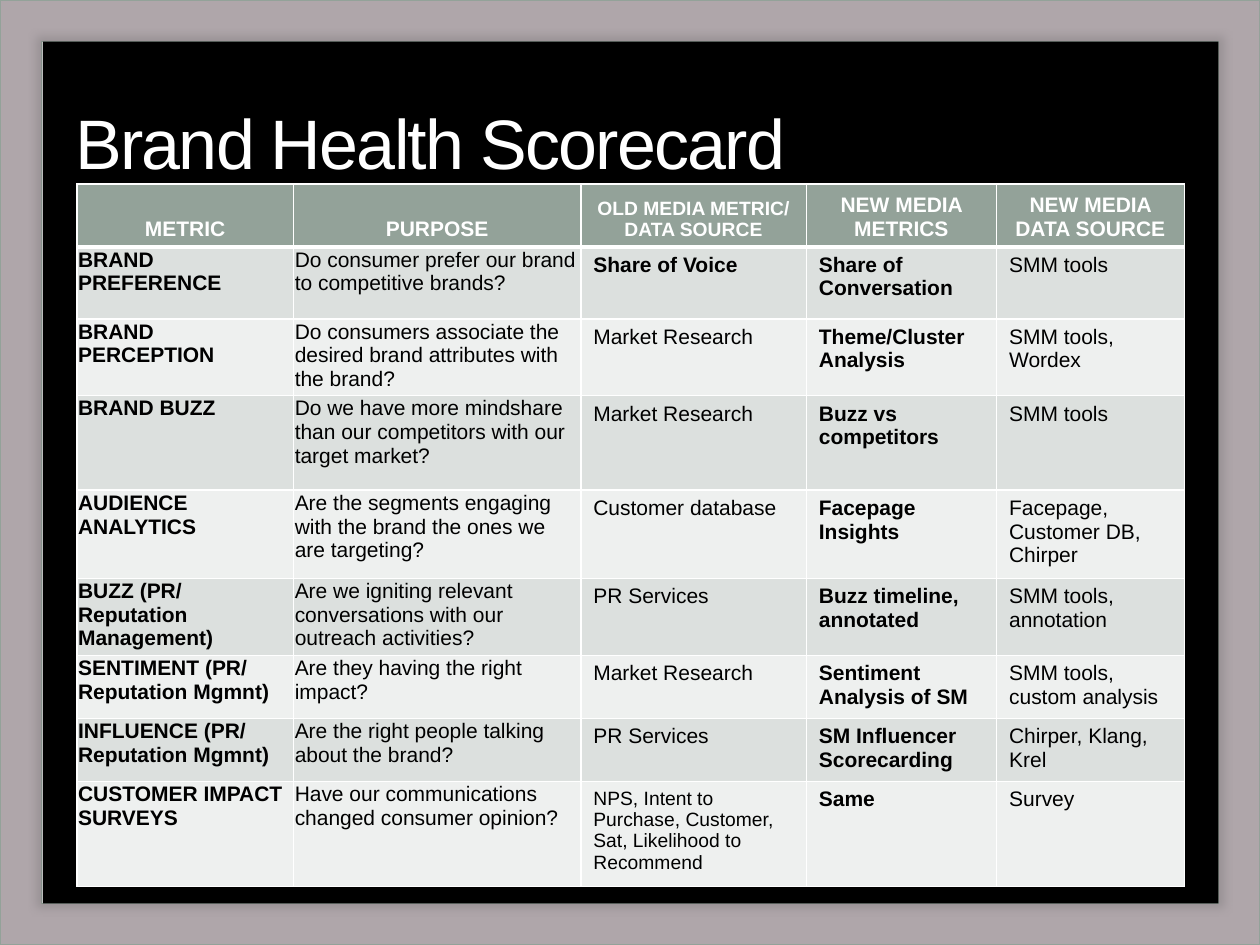
"""Build the brand health scorecard slide."""
from dataclasses import dataclass

import lxml.etree
import pptx
import pptx.dml.color
import pptx.enum.shapes
import pptx.enum.text
import pptx.oxml
import pptx.oxml.ns
import pptx.util

Inches = pptx.util.Inches
Pt = pptx.util.Pt
Shape = pptx.enum.shapes.MSO_SHAPE
Anchor = pptx.enum.text.MSO_ANCHOR
Align = pptx.enum.text.PP_ALIGN
qn = pptx.oxml.ns.qn

WHITE, BLACK, SAGE, MAUVE = "FFFFFF", "000000", "93A299", "AFA6AA"
BANDS = ("DCE0DE", "EEF0EF")
BOLD = (True, False, False, True, False)
WIDTHS = (1.72, 2.28, 1.79, 1.51, 1.49)
HEADS = ("METRIC", "PURPOSE", "OLD MEDIA METRIC/ DATA SOURCE",
         "NEW MEDIA METRICS", "NEW MEDIA DATA SOURCE")
SMALL = {"OLD MEDIA METRIC/ DATA SOURCE",
         "NPS, Intent to Purchase, Customer, Sat, Likelihood to Recommend"}


@dataclass
class Row:
    """One line of the scorecard."""
    high: float
    texts: tuple[str, ...]


ROWS = (
    Row(0.57, ("BRAND PREFERENCE",
               "Do consumer prefer our brand to competitive brands?",
               "Share of Voice", "Share of Conversation", "SMM tools")),
    Row(0.57, ("BRAND PERCEPTION",
               "Do consumers associate the desired brand attributes with the brand?",
               "Market Research", "Theme/Cluster Analysis", "SMM tools, Wordex")),
    Row(0.75, ("BRAND BUZZ",
               "Do we have more mindshare than our competitors with our target market?",
               "Market Research", "Buzz vs competitors", "SMM tools")),
    Row(0.65, ("AUDIENCE ANALYTICS",
               "Are the segments engaging with the brand the ones we are targeting?",
               "Customer database", "Facepage Insights",
               "Facepage, Customer DB, Chirper")),
    Row(0.57, ("BUZZ (PR/ Reputation Management)",
               "Are we igniting relevant conversations with our outreach activities?",
               "PR Services", "Buzz timeline, annotated", "SMM tools, annotation")),
    Row(0.46, ("SENTIMENT (PR/ Reputation Mgmnt)",
               "Are they having the right impact?",
               "Market Research", "Sentiment Analysis of SM",
               "SMM tools, custom analysis")),
    Row(0.46, ("INFLUENCE (PR/ Reputation Mgmnt)",
               "Are the right people talking about the brand?",
               "PR Services", "SM Influencer Scorecarding", "Chirper, Klang, Krel")),
    Row(0.83, ("CUSTOMER IMPACT SURVEYS",
               "Have our communications changed consumer opinion?",
               "NPS, Intent to Purchase, Customer, Sat, Likelihood to Recommend",
               "Same", "Survey")),
)


def color(target, code: str) -> None:
    """Set a fill or a font to a hex colour."""
    if hasattr(target, "solid"):
        target.solid()
        target.fore_color.rgb = pptx.dml.color.RGBColor.from_string(code)
    else:
        target.color.rgb = pptx.dml.color.RGBColor.from_string(code)


def write(frame, text: str, *, size: float = 12, tint: str = BLACK,
          bold: bool = False, align=Align.LEFT, space: int = 0) -> None:
    """Put one formatted run into a text frame."""
    frame.word_wrap = True
    para = frame.paragraphs[0]
    para.alignment = align
    run = para.add_run()
    run.text = text
    run.font.name = "Arial"
    run.font.size = Pt(size)
    run.font.bold = bold
    color(run.font, tint)
    if space:
        run.font._element.set("spc", str(space * 100))


def panel(slide, kind, box: tuple[float, ...], fill: str):
    """Draw a filled preset shape without shadow or line."""
    shape = slide.shapes.add_shape(kind, *map(Inches, box))
    shape.shadow.inherit = False
    color(shape.fill, fill)
    shape.line.fill.background()
    return shape


def glow(shape) -> None:
    """Give a shape a soft shadow on all sides."""
    group = shape._element.spPr.find(qn("a:effectLst"))
    shade = lxml.etree.SubElement(
        group, qn("a:outerShdw"), blurRad=str(Pt(5)), dist="0", dir="0",
        sx="101000", sy="101000", algn="ctr", rotWithShape="0")
    tone = lxml.etree.SubElement(shade, qn("a:srgbClr"), val="595959")
    lxml.etree.SubElement(tone, qn("a:alpha"), val="25000")


def edge(cell, base: float) -> None:
    """Draw white borders round a cell, with a given bottom width."""
    props = cell._tc.get_or_add_tcPr()
    for place, side in enumerate("LRTB"):
        wide = Pt(base if side == "B" else 1)
        line = lxml.etree.Element(qn(f"a:ln{side}"), w=str(wide))
        fill = lxml.etree.SubElement(line, qn("a:solidFill"))
        lxml.etree.SubElement(fill, qn("a:srgbClr"), val=WHITE)
        props.insert(place, line)


def score(slide) -> None:
    """Draw the scorecard table."""
    rows = (Row(0.46, HEADS),) + ROWS
    high = sum(row.high for row in rows)
    table = slide.shapes.add_table(
        len(rows), len(WIDTHS), Inches(0.61), Inches(1.46),
        Inches(sum(WIDTHS)), Inches(high)).table
    for col, wide in zip(table.columns, WIDTHS):
        col.width = Inches(wide)
    for y, row in enumerate(rows):
        head = y == 0
        table.rows[y].height = Inches(row.high)
        for x, text in enumerate(row.texts):
            cell = table.cell(y, x)
            color(cell.fill, SAGE if head else BANDS[(y - 1) % 2])
            edge(cell, 3 if head or y == 0 else 1)
            if head:
                cell.vertical_anchor = Anchor.BOTTOM
            elif x < 2:
                cell.margin_left = cell.margin_right = Inches(0.01)
                cell.margin_top, cell.margin_bottom = Inches(0.01), Inches(0)
            write(cell.text_frame, text, size=11 if text in SMALL else 12,
                  tint=WHITE if head else BLACK,
                  bold=head or BOLD[x] or text == "Share of Voice",
                  align=Align.CENTER if head else Align.LEFT)


def main() -> None:
    """Build and save the slide."""
    deck = pptx.Presentation()
    deck.slide_width, deck.slide_height = Inches(10), Inches(7.5)
    slide = deck.slides.add_slide(deck.slide_layouts[6])
    frame = panel(slide, Shape.FRAME, (0, 0, 10, 7.5), MAUVE)
    frame.adjustments[0] = 0.044
    color(frame.line.fill, SAGE)
    frame.line.width = Pt(0.75)
    glow(panel(slide, Shape.RECTANGLE, (0.34, 0.33, 9.33, 6.84), BLACK))
    title = slide.shapes.add_textbox(*map(Inches, (0.5, 0.58, 9, 1.08)))
    title.text_frame.vertical_anchor = Anchor.MIDDLE
    write(title.text_frame, "Brand Health Scorecard", size=40, tint=WHITE, space=-1)
    score(slide)
    deck.save("out.pptx")


if __name__ == "__main__":
    main()
